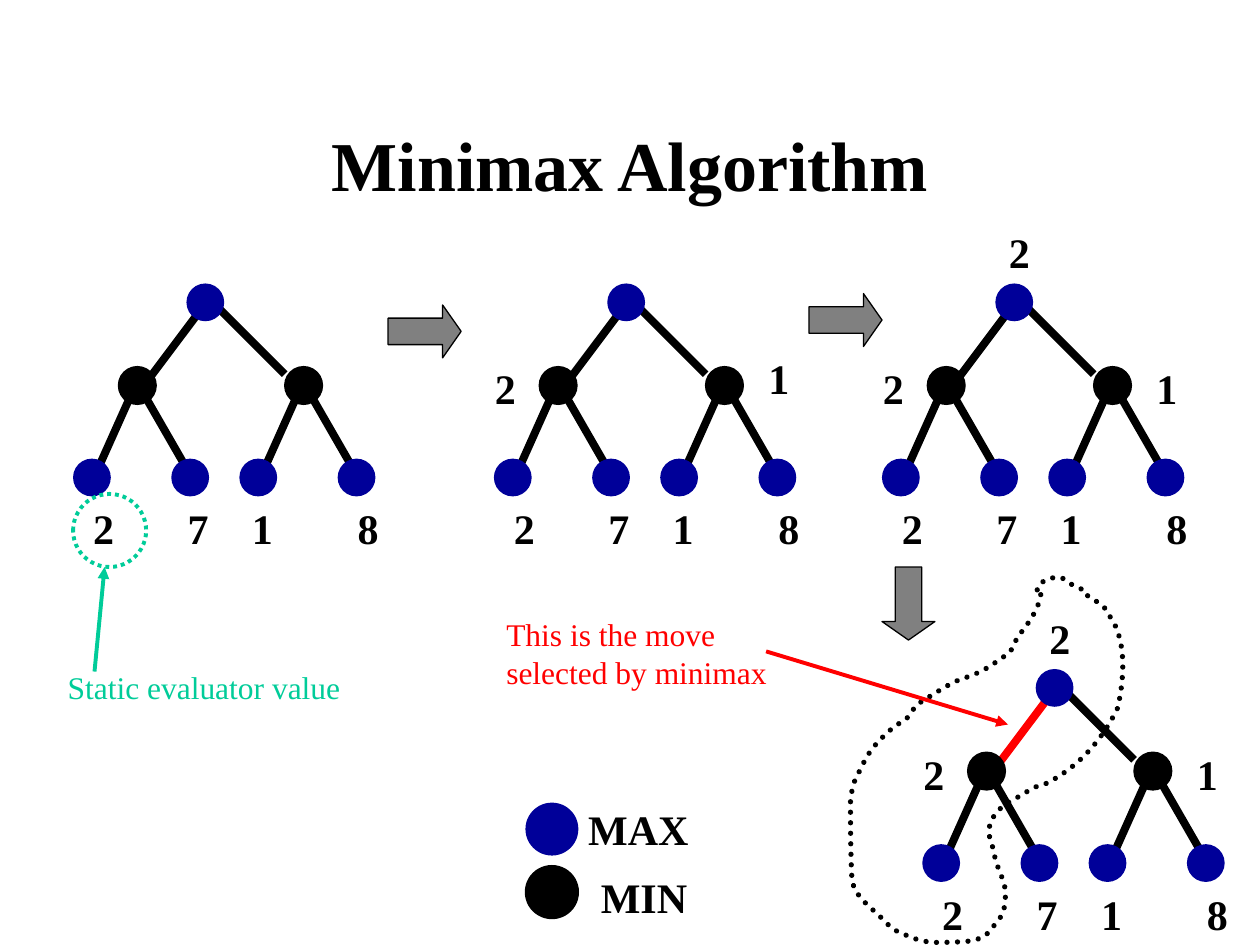
from pptx import Presentation
from pptx.dml.color import RGBColor
from pptx.enum.dml import MSO_LINE
from pptx.enum.shapes import MSO_CONNECTOR, MSO_SHAPE
from pptx.enum.text import MSO_ANCHOR, MSO_AUTO_SIZE, PP_ALIGN
from pptx.oxml.ns import qn
from pptx.util import Inches, Pt
from lxml import etree

ELLIPSE, RIGHT_ARROW = MSO_SHAPE.OVAL, MSO_SHAPE.RIGHT_ARROW
STRAIGHT = MSO_CONNECTOR.STRAIGHT
SYS_DOT = MSO_LINE.ROUND_DOT
LEFT, CENTER = PP_ALIGN.LEFT, PP_ALIGN.CENTER

FONT = "Times New Roman"
BLACK, NAVY, GRAY, RED, GREEN = "000000", "000099", "808080", "FF0000", "00CC99"

# Tree geometry, relative to the left of the first leaf and the top of the root
NODE = 0.3
ROOT = (0.9, 0)
MIN_NODES = [(0.36, 0.66), (1.68, 0.66)]
LEAVES = [(0, 1.39), (0.78, 1.39), (1.32, 1.39), (2.1, 1.39)]
CHOSEN_EDGE = ((0.54, 0.84), (1.08, 0.12))
EDGES = [
    CHOSEN_EDGE,
    ((1.68, 0.72), (1.08, 0.12)),
    ((0.48, 0.84), (0.18, 1.51)),
    ((0.54, 0.84), (0.96, 1.57)),
    ((1.8, 0.84), (1.5, 1.51)),
    ((1.86, 0.84), (2.28, 1.57)),
]
# Value, left, top, box width
LEAF_VALUES = [("2", 0.06, 1.69, 0.37), ("7", 0.81, 1.69, 0.26),
               ("1", 1.32, 1.69, 0.37), ("8", 2.16, 1.69, 0.37)]
LEFT_MIN, RIGHT_MIN = ("2", -0.09, 0.58, 0.37), ("1", 2.08, 0.58, 0.37)
RAISED_RIGHT_MIN = ("1", 2.08, 0.5, 0.37)
ROOT_VALUE = ("2", 0.91, -0.5, 0.37)

# Origin, backed-up values, colour of the edge to the chosen move
TREES = [
    (0.58, 2.25, [], BLACK),
    (3.92, 2.25, [LEFT_MIN, RAISED_RIGHT_MIN], BLACK),
    (7, 2.25, [LEFT_MIN, RIGHT_MIN, ROOT_VALUE], BLACK),
    (7.32, 5.31, [LEFT_MIN, RIGHT_MIN, ROOT_VALUE], RED),
]

# Closed outline around the chosen branch: start, then control, control, end
OUTLINE_START = (8.26, 4.72)
OUTLINE_CURVES = [
    (8.24, 4.82, 8.22, 4.85, 8.17, 4.93), (8.14, 4.98, 8.1, 5.02, 8.07, 5.07),
    (8.03, 5.14, 8.04, 5.17, 7.97, 5.21), (7.91, 5.25, 7.86, 5.29, 7.8, 5.32),
    (7.73, 5.36, 7.65, 5.38, 7.58, 5.41), (7.48, 5.46, 7.38, 5.53, 7.28, 5.59),
    (7.26, 5.61, 7.21, 5.69, 7.19, 5.71), (7.17, 5.73, 7.15, 5.73, 7.14, 5.74),
    (7.07, 5.78, 6.96, 5.89, 6.91, 5.96), (6.86, 6.03, 6.83, 6.11, 6.79, 6.18),
    (6.77, 6.23, 6.76, 6.28, 6.75, 6.34), (6.75, 6.54, 6.75, 6.75, 6.76, 6.95),
    (6.76, 7.1, 6.9, 7.19, 6.99, 7.28), (7.05, 7.34, 7.09, 7.39, 7.17, 7.41),
    (7.23, 7.45, 7.3, 7.46, 7.38, 7.48), (7.48, 7.48, 7.58, 7.48, 7.69, 7.47),
    (7.72, 7.47, 7.77, 7.45, 7.77, 7.45), (7.83, 7.43, 7.87, 7.38, 7.9, 7.33),
    (7.92, 7.31, 7.93, 7.3, 7.94, 7.28), (7.95, 7.27, 7.96, 7.25, 7.96, 7.25),
    (7.99, 7.13, 7.99, 7.02, 7.93, 6.92), (7.92, 6.87, 7.9, 6.83, 7.89, 6.78),
    (7.88, 6.73, 7.87, 6.68, 7.85, 6.63), (7.85, 6.6, 7.85, 6.56, 7.86, 6.53),
    (7.87, 6.5, 7.89, 6.48, 7.9, 6.46), (7.97, 6.37, 8.05, 6.35, 8.14, 6.29),
    (8.19, 6.26, 8.24, 6.23, 8.3, 6.22), (8.56, 6.09, 8.75, 5.87, 8.87, 5.62),
    (8.92, 5.4, 8.95, 5.08, 8.8, 4.88), (8.78, 4.82, 8.73, 4.79, 8.68, 4.76),
    (8.54, 4.67, 8.66, 4.74, 8.59, 4.68), (8.56, 4.66, 8.52, 4.65, 8.49, 4.63),
    (8.4, 4.57, 8.46, 4.6, 8.4, 4.58), (8.32, 4.59, 8.29, 4.6, 8.24, 4.65),
    (8.23, 4.68, 8.22, 4.7, 8.26, 4.72),
]

LEGEND = [("MAX", NAVY, 6.37, 4.57, 6.33, 1), ("MIN", BLACK, 6.87, 4.67, 6.87, 0.89)]
STEP_ARROWS = [(3.08, 2.42, 0), (6.42, 2.33, 0), (6.92, 4.58, 90)]


def rgb(color):
    return RGBColor.from_string(color)


def style(shape, fill=None, line=None, width=0.75, dash=None):
    shape.shadow.inherit = False
    if fill:
        shape.fill.solid()
        shape.fill.fore_color.rgb = rgb(fill)
    else:
        shape.fill.background()
    if line:
        shape.line.color.rgb = rgb(line)
        shape.line.width = Pt(width)
        if dash:
            shape.line.dash_style = dash
    else:
        shape.line.fill.background()


def add_circle(shapes, x, y, size, fill):
    circle = shapes.add_shape(ELLIPSE, Inches(x), Inches(y), Inches(size), Inches(size))
    style(circle, fill, BLACK if fill == BLACK else None)


def add_line(shapes, start, end, color, width, arrow=False):
    line = shapes.add_connector(STRAIGHT, *(Inches(v) for v in (*start, *end)))
    line.line.color.rgb = rgb(color)
    line.line.width = Pt(width)
    if arrow:
        etree.SubElement(line._element.spPr.find(qn("a:ln")), qn("a:tailEnd"), type="triangle")
    etree.SubElement(line._element.spPr, qn("a:effectLst"))


def write(frame, lines, size, color, bold, align):
    for i, words in enumerate(lines):
        paragraph = frame.paragraphs[0] if i == 0 else frame.add_paragraph()
        paragraph.alignment = align
        run = paragraph.add_run()
        run.text = words
        run.font.name, run.font.size, run.font.bold = FONT, Pt(size), bold
        run.font.color.rgb = rgb(color)


def add_text(shapes, lines, box, size=24, color=BLACK, bold=True, align=LEFT, wrap=False):
    frame = shapes.add_textbox(*(Inches(v) for v in box)).text_frame
    frame.word_wrap = wrap
    frame.auto_size = MSO_AUTO_SIZE.SHAPE_TO_FIT_TEXT
    write(frame, lines, size, color, bold, align)


def add_branch_outline(shapes):
    """Build the outline through its end points, then turn each side into a curve."""
    units = 1000
    ends = [curve[4:] for curve in OUTLINE_CURVES]
    left, top = (min(values) for values in zip(*ends))
    builder = shapes.build_freeform(*(v * units for v in OUTLINE_START), scale=Inches(1) / units)
    builder.add_line_segments([(x * units, y * units) for x, y in ends], close=True)
    outline = builder.convert_to_shape()
    style(outline, None, BLACK, 3, SYS_DOT)
    outline._element.spPr.find(qn("a:ln")).set("cap", "rnd")
    sides = list(outline._element.iter(qn("a:lnTo")))
    for side, curve in zip(sides, OUTLINE_CURVES):
        bezier = etree.Element(qn("a:cubicBezTo"))
        for x, y in zip(curve[::2], curve[1::2]):
            etree.SubElement(bezier, qn("a:pt"), x=str(round((x - left) * units)),
                             y=str(round((y - top) * units)))
        side.getparent().replace(side, bezier)


def add_tree(shapes, left, top, values, chosen_color):
    def place(point):
        return left + point[0], top + point[1]

    for edge in EDGES:
        color = chosen_color if edge == CHOSEN_EDGE else BLACK
        add_line(shapes, place(edge[0]), place(edge[1]), color, 4.5)
    for nodes, fill in (([ROOT], NAVY), (MIN_NODES, BLACK), (LEAVES, NAVY)):
        for node in nodes:
            add_circle(shapes, *place(node), NODE, fill)
    for value, x, y, width in LEAF_VALUES + values:
        add_text(shapes, [value], (*place((x, y)), width, 0.5), wrap=value == "7")


def main():
    prs = Presentation()
    prs.slide_width, prs.slide_height = Inches(10), Inches(7.5)
    shapes = prs.slides.add_slide(prs.slide_layouts[5]).shapes

    title = shapes.title
    title.left, title.top, title.width, title.height = map(Inches, (0.75, 0.67, 8.5, 1.25))
    title.text_frame.vertical_anchor = MSO_ANCHOR.MIDDLE
    write(title.text_frame, ["Minimax Algorithm"], 40, BLACK, True, CENTER)

    for left, top, values, chosen_color in TREES:
        tree = shapes.add_group_shape().shapes
        if chosen_color == RED:
            add_branch_outline(tree)
        add_tree(tree, left, top, values, chosen_color)

    legend = shapes.add_group_shape().shapes
    for player, fill, circle_top, left, top, width in LEGEND:
        add_circle(legend, 4.17, circle_top, 0.42, fill)
        add_text(legend, [player], (left, top, width, 0.5))

    add_text(shapes, ["This is the move", "selected by minimax"],
             (3.92, 4.83, 2.27, 0.7), 18, RED, False)
    add_line(shapes, (6.08, 5.17), (8, 5.75), RED, 2.25, arrow=True)
    value_ring = shapes.add_shape(ELLIPSE, *map(Inches, (0.58, 3.92, 0.58, 0.58)))
    style(value_ring, None, GREEN, 2.25, SYS_DOT)
    add_text(shapes, ["Static evaluator value"], (0.33, 5.25, 2.58, 0.4),
             18, GREEN, False, CENTER, wrap=True)
    add_line(shapes, (0.75, 5.33), (0.83, 4.5), GREEN, 2.25, arrow=True)

    for left, top, rotation in STEP_ARROWS:
        arrow = shapes.add_shape(RIGHT_ARROW, *map(Inches, (left, top, 0.58, 0.42)))
        arrow.adjustments[0], arrow.adjustments[1] = 0.5, 0.35
        arrow.rotation = rotation
        style(arrow, GRAY, BLACK)
    prs.save("out.pptx")


if __name__ == "__main__":
    main()
